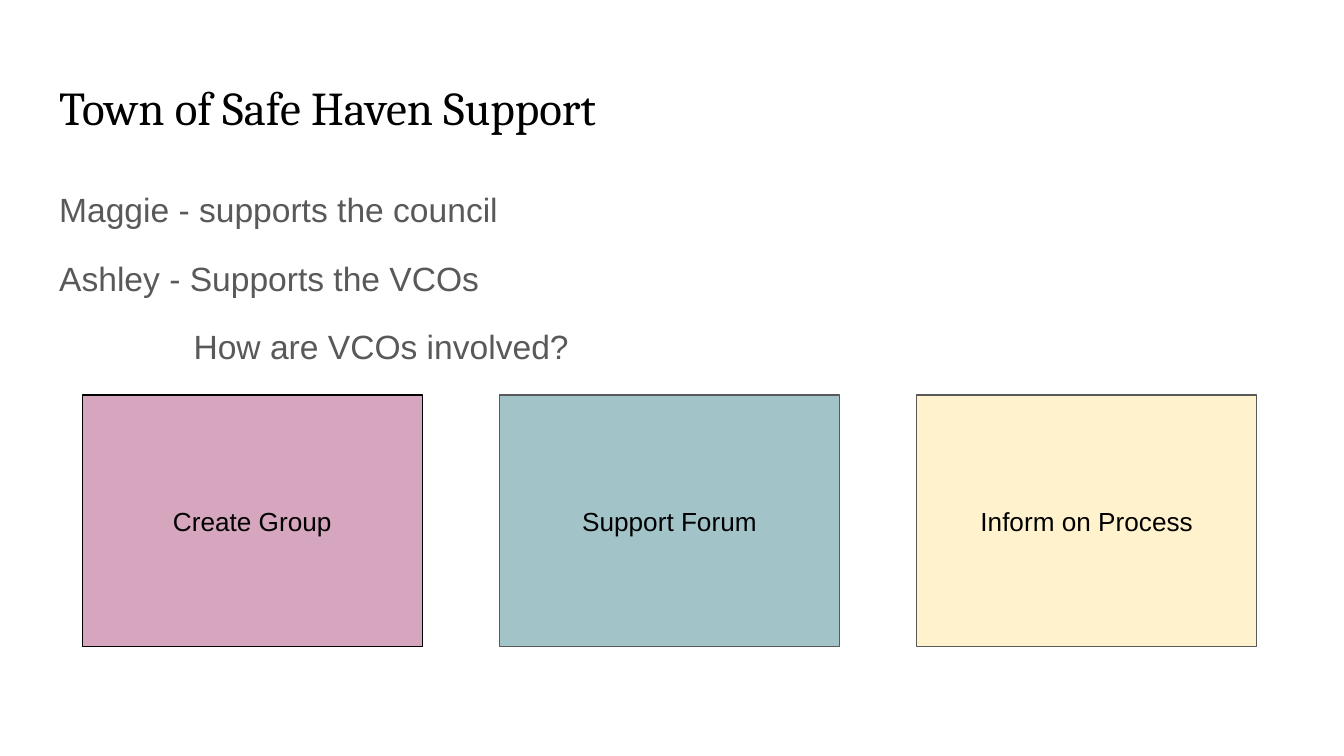
import pptx
import pptx.util
import pptx.dml.color
import pptx.enum.shapes
import pptx.enum.text

Pt = pptx.util.Pt
ALIGN = pptx.enum.text.PP_ALIGN
ANCHOR = pptx.enum.text.MSO_ANCHOR

COLORS = {"black": "000000", "gray": "595959", "pink": "D5A6BD",
          "teal": "A2C4C9", "cream": "FFF2CC"}

TITLE = "Town of Safe Haven Support"
# text, left indent
NOTES = [
    ("Maggie - supports the council", 0),
    ("Ashley - Supports the VCOs", 0),
    ("How are VCOs involved?", 72),
]
# label, fill, outline
CARDS = [
    ("Create Group", "pink", "black"),
    ("Support Forum", "teal", "gray"),
    ("Inform on Process", "cream", "gray"),
]

LEFT, WIDTH = 24.6, 671
CARD_X, CARD_Y, CARD_W, CARD_H = 44.1, 211.6, 182.2, 134.8
STEP = 223.5


def color(name):
    return pptx.dml.color.RGBColor.from_string(COLORS[name])


def write(shape, lines, size, font="Arial", ink="black", align=ALIGN.LEFT,
          anchor=ANCHOR.TOP, space=1.0, gap=0):
    """Fill a shape with (text, indent) lines; gap is the space between them."""
    frame = shape.text_frame
    frame.word_wrap = True
    frame.vertical_anchor = anchor
    frame.margin_left = frame.margin_right = Pt(7.2)
    frame.margin_top = frame.margin_bottom = Pt(7.2)
    for i, (text, indent) in enumerate(lines):
        para = frame.paragraphs[0] if i == 0 else frame.add_paragraph()
        para.alignment = align
        para.line_spacing = space
        para.space_before = Pt(gap if i else 0)
        if indent:
            para._p.get_or_add_pPr().set("marL", str(int(Pt(indent))))
        run = para.add_run()
        run.text = text
        run.font.name = font
        run.font.size = Pt(size)
        run.font.color.rgb = color(ink)


def main():
    deck = pptx.Presentation()
    deck.slide_width, deck.slide_height = Pt(720), Pt(405)
    shapes = deck.slides.add_slide(deck.slide_layouts[6]).shapes

    title = shapes.add_textbox(Pt(LEFT), Pt(35), Pt(WIDTH), Pt(45.1))
    write(title, [(TITLE, 0)], 25.2, font="Cambria")

    notes = shapes.add_textbox(Pt(LEFT), Pt(90.7), Pt(WIDTH), Pt(269))
    write(notes, NOTES, 18, ink="gray", space=1.15, gap=12)

    for i, (label, fill, edge) in enumerate(CARDS):
        card = shapes.add_shape(
            pptx.enum.shapes.MSO_SHAPE.RECTANGLE,
            Pt(CARD_X + i * STEP), Pt(CARD_Y), Pt(CARD_W), Pt(CARD_H))
        card.shadow.inherit = False
        card.fill.solid()
        card.fill.fore_color.rgb = color(fill)
        card.line.color.rgb = color(edge)
        card.line.width = Pt(0.75)
        write(card, [(label, 0)], 14, align=ALIGN.CENTER,
              anchor=ANCHOR.MIDDLE)

    deck.save("out.pptx")


if __name__ == "__main__":
    main()
